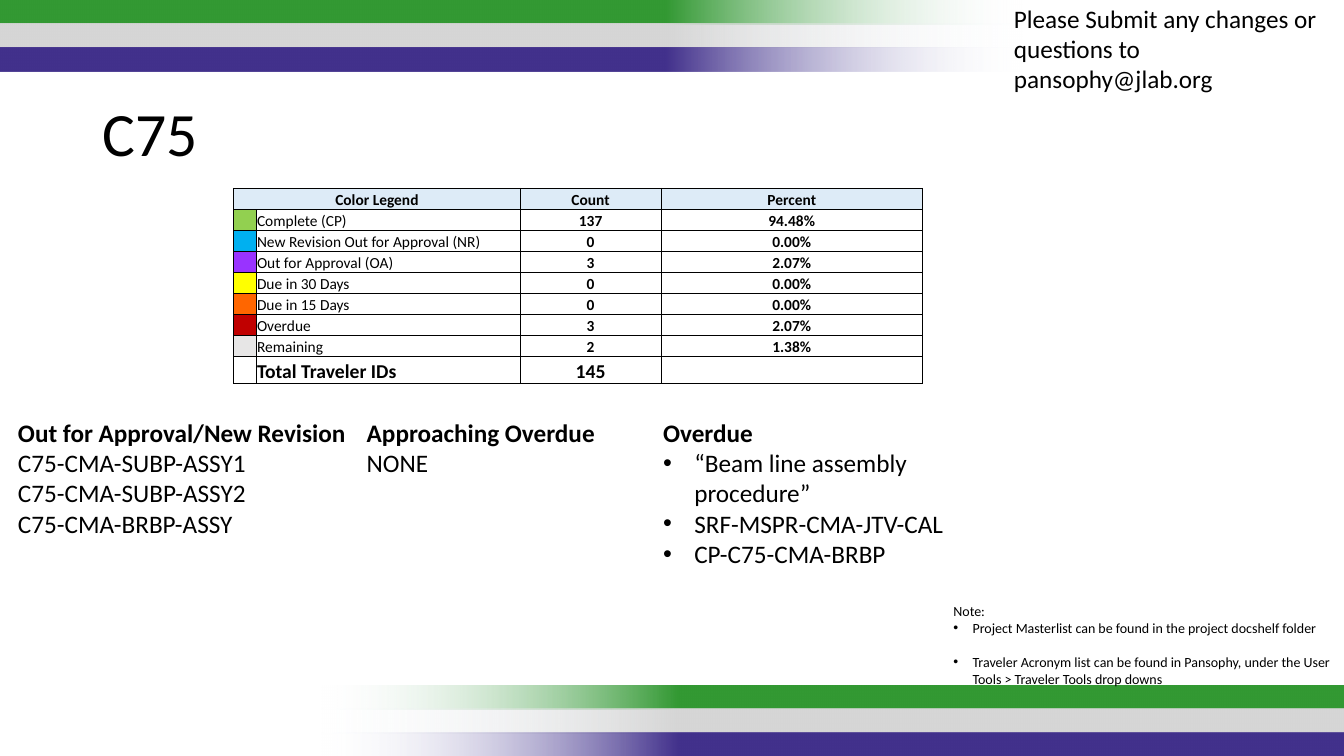
from lxml.etree import SubElement
from pptx import Presentation
from pptx.dml.color import RGBColor
from pptx.enum.shapes import MSO_SHAPE
from pptx.enum.text import MSO_ANCHOR, MSO_AUTO_SIZE, PP_ALIGN
from pptx.oxml.ns import qn
from pptx.util import Inches, Pt

COLORS = {
    "black": "000000", "fade": "F7FAFD", "header": "DDEBF7",
    "green": "339933", "gray": "D6D6D6", "purple": "42318C",
    "complete": "92D050", "revision": "00B0F0", "approval": "9933FF",
    "due_30": "FFFF00", "due_15": "FF6600", "overdue": "C00000",
    "remaining": "E7E6E6",
}
LEGEND = [
    ("complete", "Complete (CP)", "137", "94.48%"),
    ("revision", "New Revision Out for Approval (NR)", "0", "0.00%"),
    ("approval", "Out for Approval (OA)", "3", "2.07%"),
    ("due_30", "Due in 30 Days", "0", "0.00%"),
    ("due_15", "Due in 15 Days", "0", "0.00%"),
    ("overdue", "Overdue", "3", "2.07%"),
    ("remaining", "Remaining", "2", "1.38%"),
]


class StatusSlide:
    """Draws on one slide; every length is a percentage of its width or height."""

    def __init__(self, presentation):
        self.width = presentation.slide_width
        self.height = presentation.slide_height
        self.slide = presentation.slides.add_slide(presentation.slide_layouts[6])

    def across(self, share):
        return round(self.width * share / 100)

    def down(self, share):
        return round(self.height * share / 100)

    def box(self, left, top, width, height):
        return self.across(left), self.down(top), self.across(width), self.down(height)

    def color(self, name):
        return RGBColor.from_string(COLORS[name])

    def add_words(self, paragraph, text, size, bold=False):
        run = paragraph.add_run()
        run.text = text
        style = {"name": "Calibri", "size": Pt(size), "bold": bold}
        for attribute, value in style.items():
            setattr(run.font, attribute, value)
        run.font.color.rgb = self.color("black")

    def band(self, left, top, color, rotation):
        """Add a stripe that fades out at one end."""
        shape = self.slide.shapes.add_shape(
            MSO_SHAPE.RECTANGLE, *self.box(left, top, 76.28, 3.2))
        shape.shadow.inherit = False
        shape.rotation = rotation
        shape.line.fill.background()
        shape.fill.gradient()
        shape.fill.gradient_angle = 0
        stops = shape.fill.gradient_stops
        for stop, name, position in zip(stops, ("fade", color), (0, 0.35)):
            stop.color.rgb = self.color(name)
            stop.position = position
        clear = next(shape.element.spPr.iter(qn("a:srgbClr")))
        SubElement(clear, qn("a:alpha"), val="0")

    def text(self, place, lines, size, heading=False, indent=0, gaps=None, columns=1, **frame_format):
        """Add a text box; an indent puts bullets on all lines after the first."""
        frame = self.slide.shapes.add_textbox(*self.box(*place)).text_frame
        settings = {"word_wrap": True, "auto_size": MSO_AUTO_SIZE.SHAPE_TO_FIT_TEXT, **frame_format}
        for attribute, value in settings.items():
            setattr(frame, attribute, value)
        if columns > 1:
            frame._txBody.bodyPr.set("numCol", str(columns))
        for index, line in enumerate(lines):
            paragraph = frame.add_paragraph() if index else frame.paragraphs[0]
            if indent and index:
                properties = paragraph._p.get_or_add_pPr()
                properties.set("marL", str(Inches(indent)))
                properties.set("indent", str(-Inches(indent)))
                SubElement(properties, qn("a:buFont"), typeface="Arial")
                SubElement(properties, qn("a:buChar"), char="•")
            if gaps and index in gaps:
                paragraph.space_before = Pt(gaps[index])
            self.add_words(paragraph, line, size, heading and index == 0)
        return frame

    def cell(self, cell, text, size, bold, centered, fill, edges):
        settings = {
            "vertical_anchor": MSO_ANCHOR.BOTTOM, "margin_left": Pt(0.75),
            "margin_right": Pt(0.75), "margin_top": Pt(0.75), "margin_bottom": 0,
        }
        for attribute, value in settings.items():
            setattr(cell, attribute, value)
        paragraph = cell.text_frame.paragraphs[0]
        paragraph.alignment = PP_ALIGN.CENTER if centered else PP_ALIGN.LEFT
        if text:
            self.add_words(paragraph, text, size, bold)
        else:
            SubElement(paragraph._p, qn("a:endParaRPr"), sz=str(size * 100))
        properties = cell._tc.get_or_add_tcPr()
        for side in "LRTB":
            weight = Pt(1 if side in edges else 0.5)
            line = SubElement(properties, qn(f"a:ln{side}"), w=str(weight))
            solid = SubElement(line, qn("a:solidFill"))
            SubElement(solid, qn("a:srgbClr"), val=COLORS["black"])
        if fill:
            cell.fill.solid()
            cell.fill.fore_color.rgb = self.color(fill)
        else:
            cell.fill.background()

    def legend(self, left, top, column_widths, row_heights, rows):
        """Add the table; the first item of each row is its swatch colour."""
        place = self.box(left, top, sum(column_widths), sum(row_heights))
        table = self.slide.shapes.add_table(len(rows), len(column_widths), *place).table
        table.first_row = table.horz_banding = False
        for column, width in zip(table.columns, column_widths):
            column.width = self.across(width)
        last = len(rows) - 1
        for index, (swatch, *texts) in enumerate(rows):
            table.rows[index].height = self.down(row_heights[index])
            header = index == 0
            values = [texts[0], "", *texts[1:]] if header else ["", *texts]
            for number, value in enumerate(values):
                edges = ("L" if number == 0 else "") + ("T" if header else "")
                edges += "B" if index == last else ""
                self.cell(
                    table.cell(index, number), value,
                    size=14 if index == last else 11,
                    bold=header or index == last or number > 1,
                    centered=header or number > 1,
                    fill=swatch if header or number == 0 else None,
                    edges=edges)
        table.cell(0, 0).merge(table.cell(0, 1))


def main():
    presentation = Presentation()
    presentation.slide_width = Inches(13.33)
    presentation.slide_height = Inches(7.5)
    status = StatusSlide(presentation)

    for left, top, rotation in ((-0.1, 0, 180), (23.82, 90.67, 0)):
        for index, color in enumerate(("green", "gray", "purple")):
            status.band(left, top + index * 3.13, color, rotation)

    title = status.text((6.9, 11.47, 86.25, 13.2), ["C75"], 44,
                        vertical_anchor=MSO_ANCHOR.MIDDLE, auto_size=MSO_AUTO_SIZE.NONE)
    title.paragraphs[0].line_spacing = 0.9

    rows = [("header", "Color Legend", "Count", "Percent"), *LEGEND,
            (None, "Total Traveler IDs", "145", "")]
    status.legend(17.4, 24.93, [1.65, 19.65, 10.5, 19.43], [2.78] * 8 + [3.6], rows)

    status.text((0.6, 54.53, 25.88, 17.47),
                ["Out for Approval/New Revision", "C75-CMA-SUBP-ASSY1",
                 "C75-CMA-SUBP-ASSY2", "C75-CMA-BRBP-ASSY"], 18, heading=True)
    status.text((26.55, 54.53, 22.13, 9.47), ["Approaching Overdue", "NONE"], 18, heading=True)
    status.text((48.6, 54.53, 45.23, 21.6),
                ["Overdue", "“Beam line assembly procedure”",
                 "SRF-MSPR-CMA-JTV-CAL", "CP-C75-CMA-BRBP"],
                18, heading=True, indent=0.31, columns=2)
    status.text((74.7, -0.27, 25.35, 13.47),
                ["Please Submit any changes or questions to pansophy@jlab.org"], 18)
    status.text((70.2, 79.07, 29.78, 12.53),
                ["Note:", "Project Masterlist can be found in the project docshelf folder",
                 "Traveler Acronym list can be found in Pansophy, under the User Tools > "
                 "Traveler Tools drop downs"],
                10, indent=0.19, gaps={2: 12})

    presentation.save("out.pptx")


if __name__ == "__main__":
    main()
